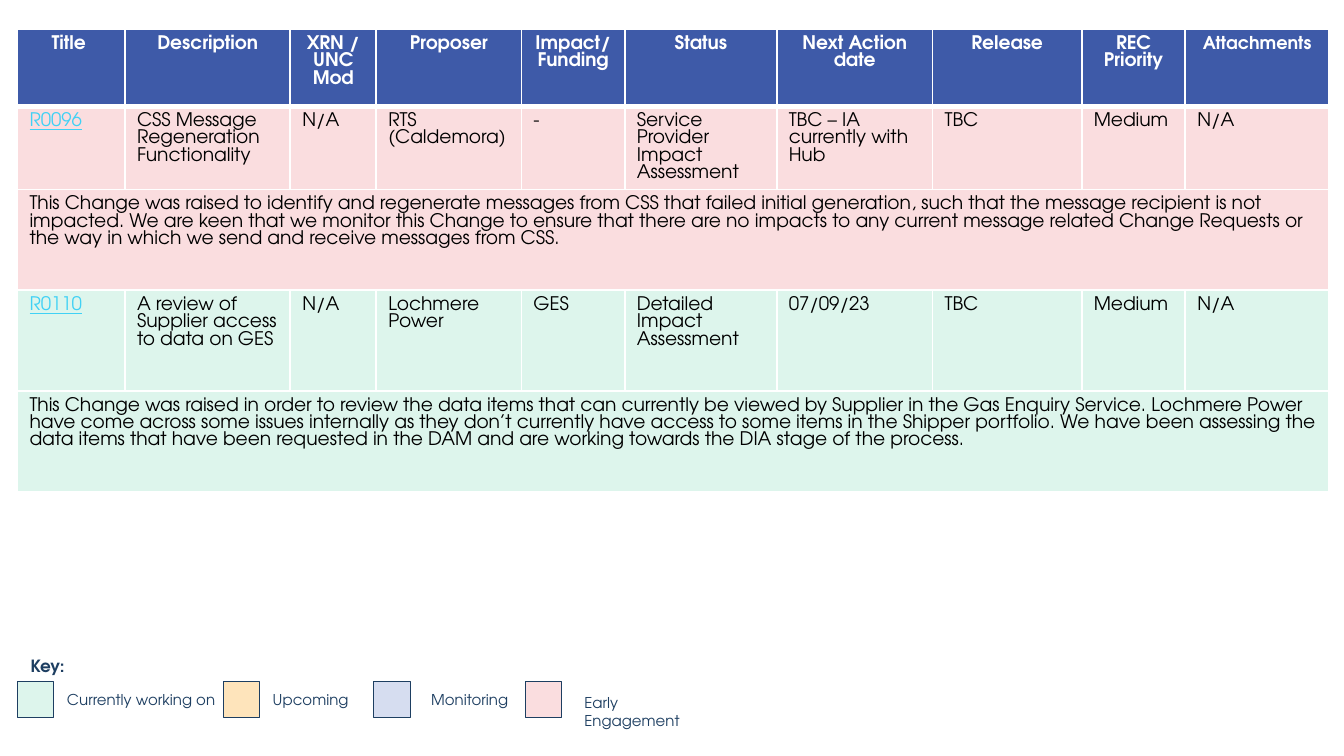
from lxml import etree
from pptx import Presentation
from pptx.dml.color import RGBColor
from pptx.enum.shapes import MSO_SHAPE
from pptx.enum.text import MSO_AUTO_SIZE, PP_ALIGN
from pptx.oxml.ns import qn
from pptx.util import Inches, Pt

RECTANGLE = MSO_SHAPE.RECTANGLE
GROW = MSO_AUTO_SIZE.SHAPE_TO_FIT_TEXT
CENTER = PP_ALIGN.CENTER
LEFT = PP_ALIGN.LEFT

FONT = "TeX Gyre Adventor"
WHITE = "FFFFFF"
BLACK = "000000"
NAVY = "1D3E61"
BLUE = "3E5AA8"
CYAN = "40D1F5"
GREEN = "DDF5EC"
ORANGE = "FEE4BB"
LILAC = "D6DDF0"
PINK = "FADDDF"

COLUMN_WIDTHS = [0.8, 1.23, 0.64, 1.08, 0.77, 1.13, 1.16, 1.11, 0.77, 1.07]
ROW_HEIGHTS = [0.57, 0.62, 0.75, 0.75, 0.75]
HEADINGS = ["Title ", "Description", "XRN / UNC Mod", "Proposer", "Impact/\nFunding",
            "Status", "Next Action date", "Release", "REC Priority", "Attachments"]
CHANGES = [
    (PINK,
     ["R0096", "CSS Message Regeneration Functionality", "N/A", "RTS (Caldemora)", "-",
      "Service Provider Impact Assessment", "TBC – IA currently with Hub", "TBC",
      "Medium", "N/A"],
     "This Change was raised to identify and regenerate messages from CSS that failed "
     "initial generation, such that the message recipient is not impacted. We are keen "
     "that we monitor this Change to ensure that there are no impacts to any current "
     "message related Change Requests or the way in which we send and receive messages "
     "from CSS."),
    (GREEN,
     ["R0110", "A review of Supplier access to data on GES", "N/A", "Lochmere Power",
      "GES", "Detailed Impact Assessment", "07/09/23", "TBC", "Medium", "N/A"],
     "This Change was raised in order to review the data items that can currently be "
     "viewed by Supplier in the Gas Enquiry Service. Lochmere Power have come across some "
     "issues internally as they don’t currently have access to some items in the Shipper "
     "portfolio. We have been assessing the data items that have been requested in the "
     "DAM and are working towards the DIA stage of the process."),
]
KEY_ITEMS = [
    (0.13, GREEN, "Currently working on", 0.4, 5.09, 1.45),
    (1.66, ORANGE, "Upcoming", 1.93, 5.09, 0.79),
    (2.78, LILAC, "Monitoring", 3.11, 5.09, 0.79),
    (3.91, PINK, "Early Engagement", 4.25, 5.11, 1.14),
]


def color(value):
    return RGBColor.from_string(value)


def add_span(para, text, size, text_color, bold=False, underline=False):
    span = para.add_run()
    span.text = text
    span.font.name = FONT
    span.font.size = Pt(size)
    span.font.bold = bold
    span.font.underline = underline
    span.font.color.rgb = color(text_color)


def set_borders(cell, bottom):
    properties = cell._tc.get_or_add_tcPr()
    for side, width in (("L", 1), ("R", 1), ("T", 1), ("B", bottom)):
        line = etree.SubElement(properties, qn(f"a:ln{side}"), w=str(Pt(width)))
        fill = etree.SubElement(line, qn("a:solidFill"))
        etree.SubElement(fill, qn("a:srgbClr"), val=WHITE)


def fill_cell(cell, text, fill, size=10, text_color=BLACK, bold=False,
              underline=False, align=LEFT, bottom=1):
    set_borders(cell, bottom)
    cell.fill.solid()
    cell.fill.fore_color.rgb = color(fill)
    cell.margin_left = cell.margin_right = Inches(0.09)
    frame = cell.text_frame
    for index, line in enumerate(text.split("\n")):
        para = frame.add_paragraph() if index else frame.paragraphs[0]
        para.alignment = align
        add_span(para, line, size, text_color, bold, underline)


def add_change_table(page):
    frame = page.shapes.add_table(
        len(ROW_HEIGHTS), len(COLUMN_WIDTHS), Inches(0.13), Inches(0.22),
        Inches(sum(COLUMN_WIDTHS)), Inches(sum(ROW_HEIGHTS)))
    table = frame.table
    for column, width in zip(table.columns, COLUMN_WIDTHS):
        column.width = Inches(width)
    for row, height in zip(table.rows, ROW_HEIGHTS):
        row.height = Inches(height)

    for index, heading in enumerate(HEADINGS):
        size = 9.5 if heading == "Attachments" else 10
        fill_cell(table.cell(0, index), heading, BLUE, size, WHITE,
                  bold=True, align=CENTER, bottom=3)

    last = len(COLUMN_WIDTHS) - 1
    for number, (fill, values, summary) in enumerate(CHANGES):
        top = 1 + 2 * number
        for index, value in enumerate(values):
            is_reference = index == 0
            fill_cell(table.cell(top, index), value, fill,
                      text_color=CYAN if is_reference else BLACK,
                      underline=is_reference)
        table.cell(top + 1, 0).merge(table.cell(top + 1, last))
        fill_cell(table.cell(top + 1, 0), summary, fill)


def add_swatch(group, left, fill):
    swatch = group.shapes.add_shape(
        RECTANGLE, Inches(left), Inches(5.07), Inches(0.27), Inches(0.27))
    swatch.shadow.inherit = False
    swatch.fill.solid()
    swatch.fill.fore_color.rgb = color(fill)
    swatch.line.color.rgb = color(NAVY)
    swatch.line.width = Pt(0.25)


def add_label(group, text, left, top, width, height=0.24, size=8, bold=False):
    box = group.shapes.add_textbox(
        Inches(left), Inches(top), Inches(width), Inches(height))
    frame = box.text_frame
    frame.word_wrap = True
    frame.auto_size = GROW
    add_span(frame.paragraphs[0], text, size, NAVY, bold)


def add_key(page):
    group = page.shapes.add_group_shape()
    add_label(group, "Key:", 0.13, 4.83, 0.88, 0.25, size=9, bold=True)
    for swatch_left, fill, text, left, top, width in KEY_ITEMS:
        add_swatch(group, swatch_left, fill)
        add_label(group, text, left, top, width)


def main():
    deck = Presentation()
    deck.slide_width = Inches(10)
    deck.slide_height = Inches(10) * 9 // 16
    page = deck.slides.add_slide(deck.slide_layouts[6])
    add_change_table(page)
    add_key(page)
    deck.save("out.pptx")


if __name__ == "__main__":
    main()
